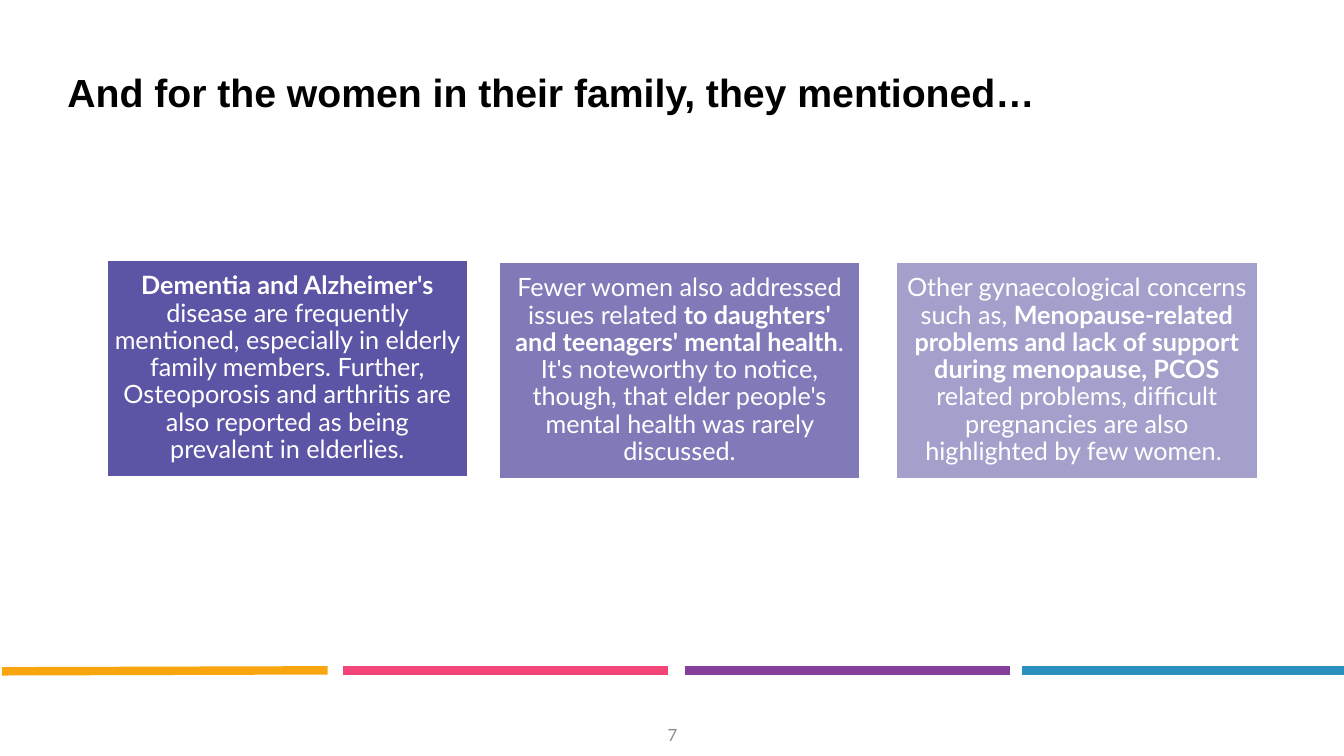
import pptx
import pptx.util
from pptx.dml.color import RGBColor
from pptx.enum.shapes import MSO_CONNECTOR, MSO_SHAPE
from pptx.enum.text import MSO_ANCHOR, PP_ALIGN
from pptx.oxml.ns import qn
from lxml import etree

Inches, Pt = pptx.util.Inches, pptx.util.Pt

TITLE = "And for the women in their family, they mentioned…"
PAGE = "7"

# left, top, opacity in percent, runs of (text, bold)
CARDS = [
    (1.06, 2.58, 90, [
        ("Dementia and Alzheimer's ", True),
        ("disease are frequently mentioned, especially in elderly family members. "
         "Further, Osteoporosis and arthritis are also reported as being prevalent "
         "in elderlies.", False)]),
    (4.95, 2.6, 70, [
        ("Fewer women also addressed issues related ", False),
        ("to daughters' and teenagers' mental health", True),
        (". It's noteworthy to notice, though, that elder people's mental health "
         "was rarely discussed.", False)]),
    (8.89, 2.6, 50, [
        ("Other gynaecological concerns such as, ", False),
        ("Menopause-related problems and lack of support during menopause, PCOS ", True),
        ("related problems, difficult pregnancies are also highlighted by few women. ",
         False)]),
]
CARD_W, CARD_H = 3.58, 2.15
CARD_COLOR = "4B429B"

# left, start height, colour
STRIPES = [(0.02, 6.66, "F9A50E"), (3.4, 6.65, "F24678"),
           (6.79, 6.65, "853E9A"), (10.14, 6.65, "2A90C0")]
STRIPE_W, STRIPE_END = 3.23, 6.65


def rgb(value):
    return RGBColor.from_string(value)


def write(shape, runs, size, font, color, align, anchor, spacing=None, inset=None):
    """Fill the shape with one paragraph made of (text, bold) runs."""
    tf = shape.text_frame
    tf.word_wrap = True
    tf.vertical_anchor = anchor
    if inset is not None:
        tf.margin_left = tf.margin_right = Inches(inset)
        tf.margin_top = tf.margin_bottom = Inches(inset)
    p = tf.paragraphs[0]
    p.alignment = align
    p.line_spacing = spacing
    for text, bold in runs:
        r = p.add_run()
        r.text = text
        r.font.size = Pt(size)
        r.font.name = font
        r.font.bold = bold
        r.font.color.rgb = rgb(color)


def add_stripe(s, left, top, color):
    line = s.shapes.add_connector(MSO_CONNECTOR.STRAIGHT, Inches(left), Inches(top),
                                  Inches(left + STRIPE_W), Inches(STRIPE_END))
    line.line.color.rgb = rgb(color)
    line.line.width = Pt(6)
    etree.SubElement(line._element.spPr, qn("a:effectLst"))


def add_card(s, left, top, opacity, runs):
    card = s.shapes.add_shape(MSO_SHAPE.RECTANGLE, Inches(left), Inches(top),
                              Inches(CARD_W), Inches(CARD_H))
    card.shadow.inherit = False
    card.fill.solid()
    card.fill.fore_color.rgb = rgb(CARD_COLOR)
    fill_color = card._element.spPr.find(qn("a:solidFill"))[0]
    etree.SubElement(fill_color, qn("a:alpha"), val=str(opacity * 1000))
    card.line.color.rgb = rgb("FFFFFF")
    card.line.width = Pt(1)
    write(card, runs, 18, "Lato", "FFFFFF", PP_ALIGN.CENTER, MSO_ANCHOR.MIDDLE, 0.9, 0.07)


def main():
    prs = pptx.Presentation()
    prs.slide_width, prs.slide_height = Inches(13.33), Inches(7.5)
    s = prs.slides.add_slide(prs.slide_layouts[6])

    for stripe in STRIPES:
        add_stripe(s, *stripe)

    page = s.shapes.add_textbox(Inches(5.17), Inches(7.09), Inches(3), Inches(0.4))
    write(page, [(PAGE, False)], 12, "Lato", "8C8C8C", PP_ALIGN.CENTER, MSO_ANCHOR.MIDDLE)

    title = s.shapes.add_textbox(Inches(0.57), Inches(0.68), Inches(12.34), Inches(1.04))
    write(title, [(TITLE, True)], 28, "Arial", "000000", PP_ALIGN.LEFT, MSO_ANCHOR.TOP, 0.9)

    for card in CARDS:
        add_card(s, *card)

    prs.save("out.pptx")


if __name__ == "__main__":
    main()
